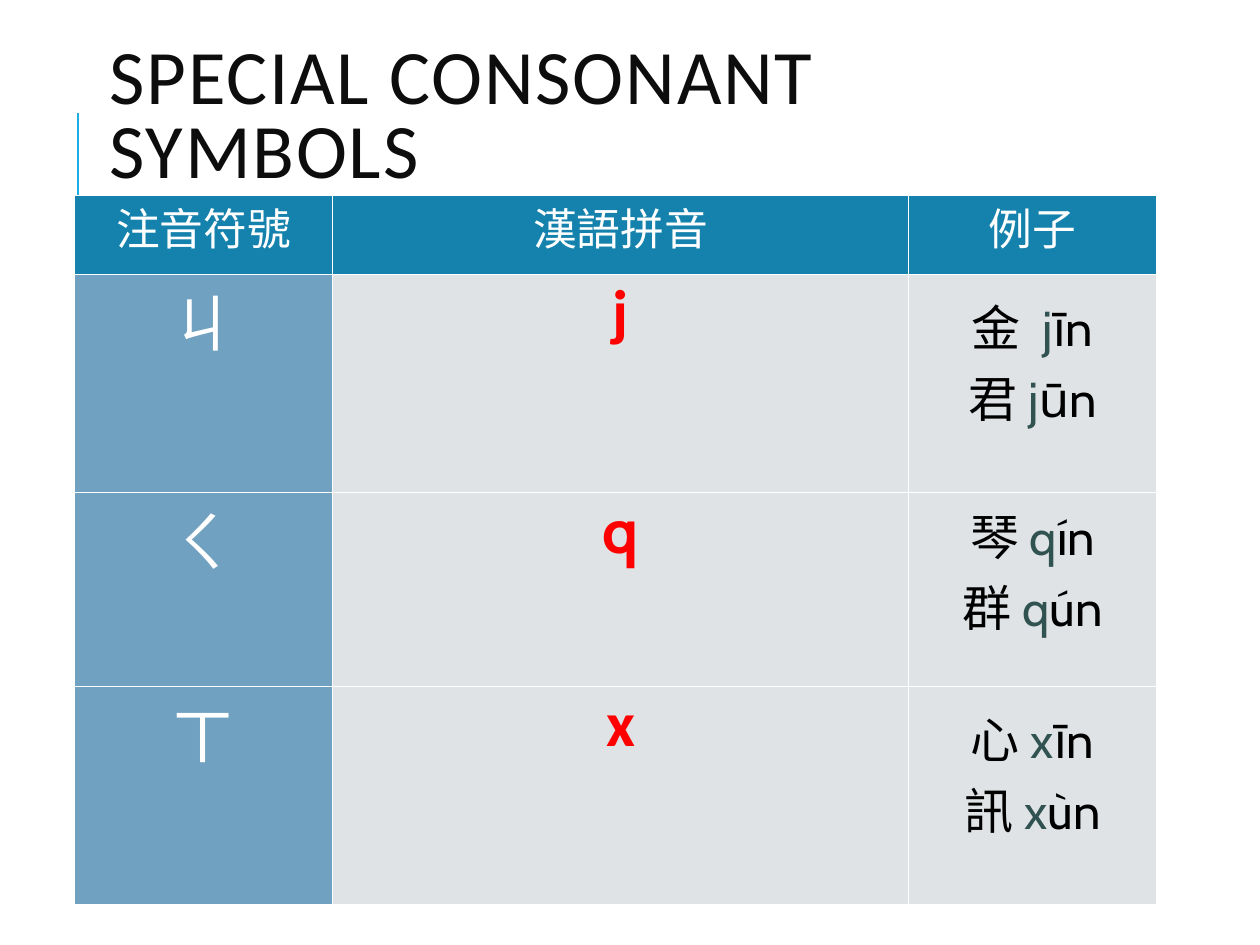
from lxml.etree import SubElement
from pptx import Presentation
from pptx.dml.color import RGBColor
from pptx.enum.shapes import MSO_CONNECTOR
from pptx.enum.text import MSO_ANCHOR, MSO_AUTO_SIZE, PP_ALIGN
from pptx.oxml import parse_xml
from pptx.oxml.ns import nsdecls, qn
from pptx.util import Inches, Pt

WHITE = RGBColor(0xFF, 0xFF, 0xFF)
BLACK = RGBColor(0, 0, 0)
INK = RGBColor(0x0D, 0x0D, 0x0D)
ACCENT = RGBColor(0x1C, 0xAD, 0xE4)
HEADER_BLUE = RGBColor(0x14, 0x82, 0xAC)
SYMBOL_BLUE = RGBColor(0x70, 0xA1, 0xC0)
PALE_GREY = RGBColor(0xDF, 0xE3, 0xE5)
RED = RGBColor(0xFF, 0, 0)
GREEN = RGBColor(0x30, 0x52, 0x50)

COLUMNS = (2.05, 4.57, 1.97)
HEADINGS = ("注音符號", "漢語拼音", "例子")
# Symbol, pinyin letter, pinyin font, examples as (character, rest of syllable)
JI = ("ㄐ", "j", "Calibri", (("金  ", "īn"), ("君 ", "ūn")))
QI = ("ㄑ", "q", "Cabin", (("琴 ", "ín"), ("群 ", "ún")))
XI = ("ㄒ", "x", "Calibri", (("心 ", "īn"), ("訊 ", "ùn")))


def add_span(para, text, size, color, font="Cabin", bold=False):
    span = para.add_run()
    span.text = text
    span.font.name = font
    span.font.size = Pt(size)
    span.font.bold = bold
    span.font.color.rgb = color
    return span


def format_cell(cell, fill):
    """Give a cell white borders, a plain fill and its margins."""
    properties = cell._tc.get_or_add_tcPr()
    for side in ("L", "R", "T", "B"):
        properties.append(parse_xml(
            f'<a:ln{side} {nsdecls("a")} w="12700"><a:solidFill>'
            f'<a:srgbClr val="{WHITE}"/></a:solidFill></a:ln{side}>'))
    cell.fill.solid()
    cell.fill.fore_color.rgb = fill
    cell.margin_left = cell.margin_right = Inches(0.07)
    cell.margin_top = cell.margin_bottom = 0
    cell.vertical_anchor = MSO_ANCHOR.TOP


def centred(para):
    para.alignment = PP_ALIGN.CENTER
    return para


def fill_header(cells):
    for cell, heading in zip(cells, HEADINGS):
        format_cell(cell, HEADER_BLUE)
        add_span(centred(cell.text_frame.paragraphs[0]), heading, 25, WHITE)


def fill_consonant(cells, consonant, middle):
    symbol, letter, font, examples = consonant
    symbol_cell, letter_cell, example_cell = cells
    for cell, fill in zip(cells, (SYMBOL_BLUE, PALE_GREY, PALE_GREY)):
        format_cell(cell, fill)
    add_span(centred(symbol_cell.text_frame.paragraphs[0]), symbol, 36, WHITE)
    add_span(centred(letter_cell.text_frame.paragraphs[0]), letter, 36, RED, font, True)

    # Examples, with the initial consonant picked out
    if middle:
        example_cell.vertical_anchor = MSO_ANCHOR.MIDDLE
        example_cell.margin_bottom = Inches(0.36)
    else:
        example_cell.margin_top = example_cell.margin_bottom = Inches(0.05)
        example_cell.margin_left = example_cell.margin_right = Inches(0.1)
    frame = example_cell.text_frame
    for index, (character, ending) in enumerate(examples):
        para = centred(frame.add_paragraph() if index else frame.paragraphs[0])
        add_span(para, character, 28, BLACK)
        add_span(para, letter, 28, GREEN)
        add_span(para, ending, 28, BLACK)


def add_grid(page, left, top, heights):
    """Add an unstyled table and return its rows as lists of cells."""
    table = page.shapes.add_table(
        len(heights), len(COLUMNS), Inches(left), Inches(top),
        Inches(sum(COLUMNS)), Inches(sum(heights))).table
    table.first_row = table.horz_banding = False
    for column, width in zip(table.columns, COLUMNS):
        column.width = Inches(width)
    for row, height in zip(table.rows, heights):
        row.height = Inches(height)
    return [list(row.cells) for row in table.rows]


def add_title(page, left, top, width, height):
    # Accent rule, behind the title
    rule = page.shapes.add_connector(
        MSO_CONNECTOR.STRAIGHT, Inches(0.62), Inches(1.9), Inches(0.62), Inches(0.9))
    rule.line.color.rgb = ACCENT
    rule.line.width = Pt(1.5)
    SubElement(rule._element.spPr, qn("a:effectLst"))

    title = page.shapes.title
    title._element.addprevious(rule._element)
    title.left, title.top = Inches(left), Inches(top)
    title.width, title.height = Inches(width), Inches(height)
    frame = title.text_frame
    frame.word_wrap = True
    frame.auto_size = MSO_AUTO_SIZE.NONE
    frame.vertical_anchor = MSO_ANCHOR.MIDDLE
    para = frame.paragraphs[0]
    para.alignment = PP_ALIGN.LEFT
    para.line_spacing = 0.8
    span = add_span(para, "SPECIAL CONSONANT SYMBOLS", 44, INK, "Calibri")
    span.font._element.set("spc", "100")


def add_consonant_tables(page, left, top):
    # Main table: headings and the first two consonants
    heights = (0.63, 1.73, 1.54)
    header, first, second = add_grid(page, left, top, heights)
    fill_header(header)
    fill_consonant(first, JI, middle=True)
    fill_consonant(second, QI, middle=False)

    # Second table: the last consonant, directly below
    (last,) = add_grid(page, left, top + sum(heights), (1.73,))
    fill_consonant(last, XI, middle=True)


def main():
    deck = Presentation()
    deck.slide_width, deck.slide_height = Inches(10), Inches(7.5)
    page = deck.slides.add_slide(deck.slide_layouts[5])
    add_title(page, 0.77, 0.13, 7.97, 1.64)
    add_consonant_tables(page, 0.59, 1.55)
    deck.save("out.pptx")


if __name__ == "__main__":
    main()
